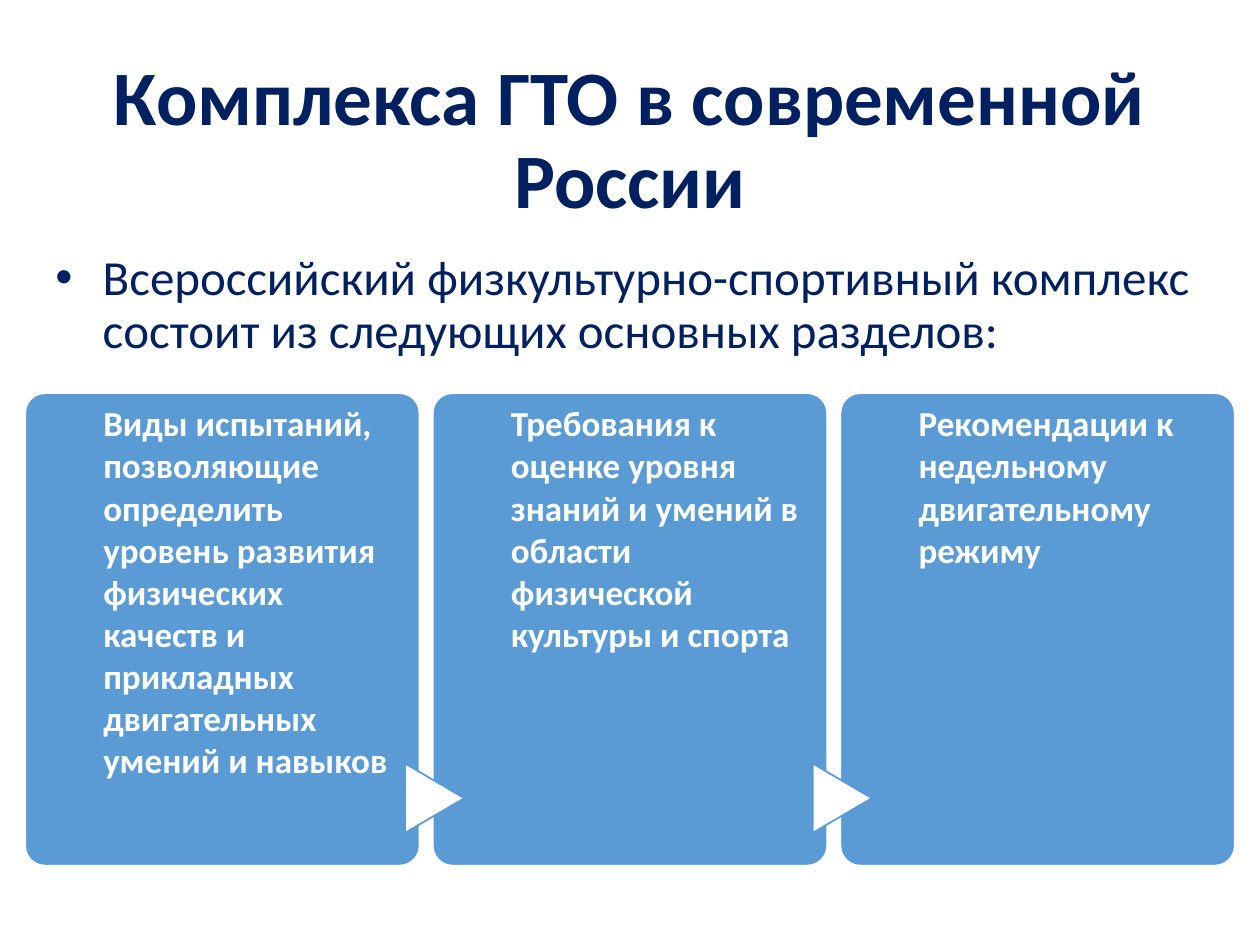
import pptx
import pptx.dml.color
import pptx.enum.shapes
import pptx.enum.text
import pptx.oxml
import pptx.util

Inches = pptx.util.Inches
Shapes = pptx.enum.shapes.MSO_SHAPE
Align = pptx.enum.text.PP_ALIGN
Anchor = pptx.enum.text.MSO_ANCHOR

SLIDE_WIDTH, SLIDE_HEIGHT = 10, 7.5
MARGIN = 0.2
CARD_TOP, CARD_WIDTH, CARD_HEIGHT = 3.12, 3.13, 3.75

TITLE = "Комплекса ГТО в современной России"
INTRO = "Всероссийский физкультурно-спортивный комплекс состоит из следующих основных разделов:"
SECTIONS = [
    "Виды испытаний, позволяющие определить уровень развития физических качеств и прикладных двигательных умений и навыков",
    "Требования к оценке уровня знаний и умений в области физической культуры и спорта",
    "Рекомендации к недельному двигательному режиму",
]


def color(value):
    return pptx.dml.color.RGBColor.from_string(value)


class SlideBuilder:
    font_name = "Calibri"
    navy, blue, white = "002060", "5B9BD5", "FFFFFF"

    def __init__(self, slide):
        self.slide = slide

    def set_text(self, shape, text, size, font_color, bold=False, align=Align.LEFT, spacing=1.0):
        frame = shape.text_frame
        frame.text = text
        frame.word_wrap = True
        frame.auto_size = pptx.enum.text.MSO_AUTO_SIZE.NONE
        paragraph = frame.paragraphs[0]
        paragraph.alignment = align
        paragraph.line_spacing = spacing
        paragraph.space_before = pptx.util.Pt(0)
        font = paragraph.font
        font.name, font.size, font.bold = self.font_name, pptx.util.Pt(size), bold
        font.color.rgb = color(font_color)
        return frame

    def place(self, shape, left, top, width, height):
        shape.left, shape.top = Inches(left), Inches(top)
        shape.width, shape.height = Inches(width), Inches(height)

    def title(self, text, *box):
        shape = self.slide.shapes.title
        self.place(shape, *box)
        frame = self.set_text(shape, text, 44, self.navy, True, Align.CENTER, 0.9)
        frame.vertical_anchor = Anchor.MIDDLE

    def body(self, text, *box):
        shape = self.slide.placeholders[1]
        self.place(shape, *box)
        # Plain paragraph: no bullet, no hanging indent
        properties = shape.text_frame.paragraphs[0]._p.get_or_add_pPr()
        properties.set("marL", "0")
        properties.set("indent", "0")
        properties.append(pptx.oxml.parse_xml(
            '<a:buNone xmlns:a="http://schemas.openxmlformats.org/drawingml/2006/main"/>'))
        self.set_text(shape, text, 28, self.navy, spacing=0.9)

    def shape(self, kind, fill, line, left, top, width, height):
        shape = self.slide.shapes.add_shape(
            kind, Inches(left), Inches(top), Inches(width), Inches(height))
        shape.shadow.inherit = False
        shape.fill.solid()
        shape.fill.fore_color.rgb = color(fill)
        shape.line.color.rgb = color(line)
        shape.line.width = pptx.util.Pt(1)
        return shape

    def card(self, left):
        card = self.shape(Shapes.ROUNDED_RECTANGLE, self.blue, self.white,
                          left, CARD_TOP, CARD_WIDTH, CARD_HEIGHT)
        card.adjustments[0] = 0.05

    def arrow(self, card_left):
        arrow = self.shape(Shapes.FLOWCHART_EXTRACT, self.white, self.blue,
                           card_left - 0.26, 6.1, 0.55, 0.47)
        arrow.rotation = 90

    def card_text(self, text, card_left):
        box = self.slide.shapes.add_textbox(
            Inches(card_left + 0.62), Inches(CARD_TOP), Inches(2.33), Inches(CARD_HEIGHT))
        frame = self.set_text(box, text, 20, self.white, bold=True)
        frame.margin_left = frame.margin_right = frame.margin_bottom = 0
        frame.margin_top = Inches(0.07)


def main():
    presentation = pptx.Presentation()
    presentation.slide_width = Inches(SLIDE_WIDTH)
    presentation.slide_height = Inches(SLIDE_HEIGHT)
    builder = SlideBuilder(presentation.slides.add_slide(presentation.slide_layouts[1]))

    # Heading and introduction
    builder.title(TITLE, 0.69, 0.4, 8.62, 1.45)
    builder.body(INTRO, 0.34, 1.96, 9.46, 1.41)

    # Three section cards, spread evenly and linked by arrows
    pitch = (SLIDE_WIDTH - 2 * MARGIN - CARD_WIDTH) / (len(SECTIONS) - 1)
    for index, text in enumerate(SECTIONS):
        left = MARGIN + index * pitch
        builder.card(left)
        if index > 0:
            builder.arrow(left)
        builder.card_text(text, left)

    presentation.save("out.pptx")


if __name__ == "__main__":
    main()
